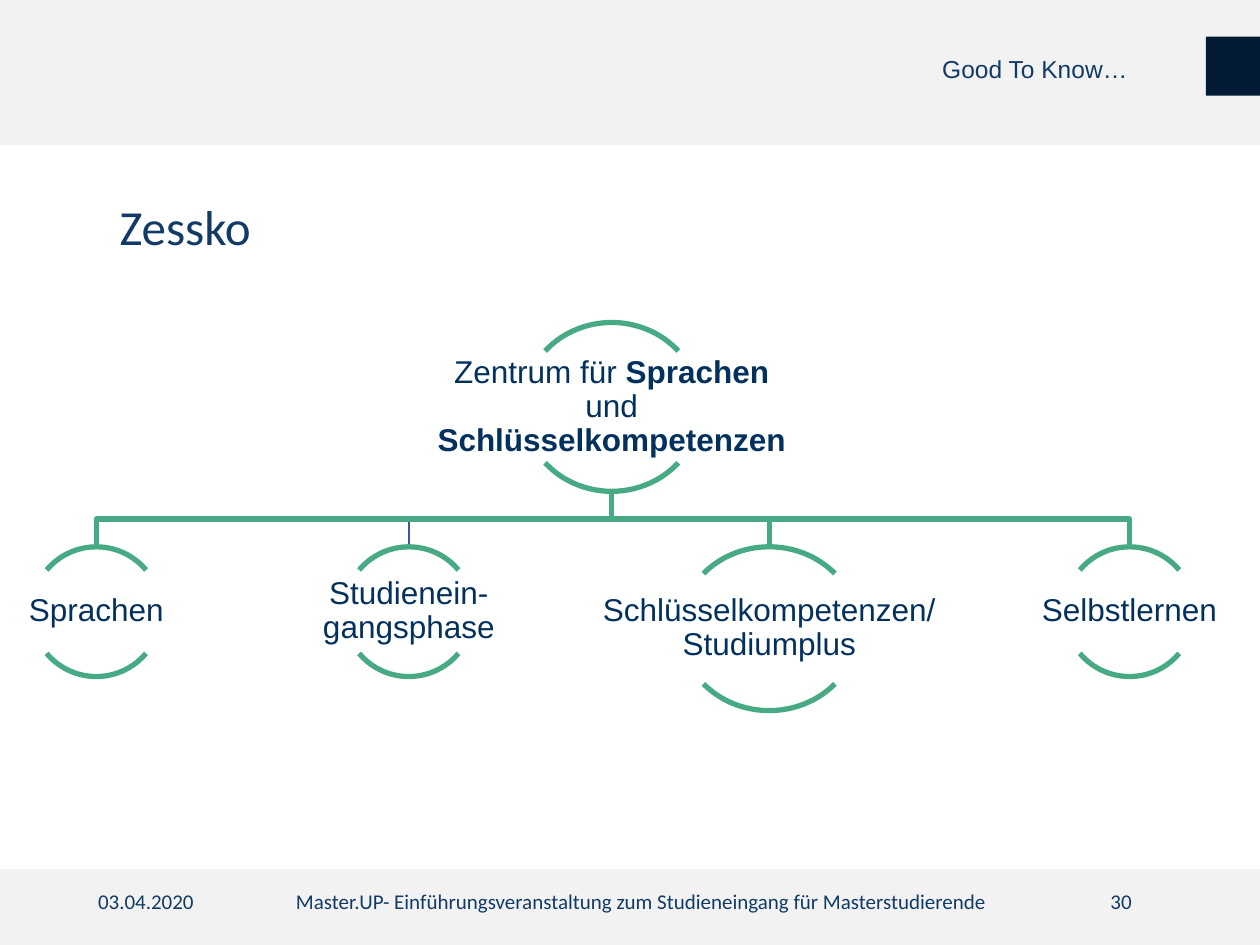
from dataclasses import dataclass

from pptx import Presentation
from pptx.dml.color import RGBColor
from pptx.enum.shapes import MSO_SHAPE
from pptx.enum.text import MSO_ANCHOR, PP_ALIGN
from pptx.util import Inches, Pt

RECT, ARC = MSO_SHAPE.RECTANGLE, MSO_SHAPE.ARC
TOP, MIDDLE = MSO_ANCHOR.TOP, MSO_ANCHOR.MIDDLE
LEFT, CENTER, RIGHT = PP_ALIGN.LEFT, PP_ALIGN.CENTER, PP_ALIGN.RIGHT


@dataclass(frozen=True)
class Theme:
    band: str = "F2F2F2"
    navy: str = "021A33"
    text: str = "113B66"
    node_text: str = "03315E"
    green: str = "47AA84"
    blue: str = "365B9D"
    heading_font: str = "Calibri"
    body_font: str = "Arial"
    title_size: float = 28
    node_size: float = 18
    header_size: float = 14
    footer_size: float = 12
    line: float = 3
    thin_line: float = 1


@dataclass(frozen=True)
class Run:
    text: str
    bold: bool = False


@dataclass(frozen=True)
class Box:
    x: float
    y: float
    w: float
    h: float

    def lengths(self) -> tuple:
        return Inches(self.x), Inches(self.y), Inches(self.w), Inches(self.h)


@dataclass(frozen=True)
class Node:
    oval: Box
    runs: tuple[Run, ...]
    branch_color: str = Theme.green
    branch_width: float = Theme.line

    @property
    def center(self) -> float:
        return self.oval.x + self.oval.w / 2

    @property
    def label(self) -> Box:
        """Twice as wide as the oval, 64 % of its height, same centre."""
        o = self.oval
        return Box(o.x - o.w / 2, o.y + 0.18 * o.h, 2 * o.w, 0.64 * o.h)


THEME = Theme()
ARC_ANGLES = ((132, 192), (24, 84))  # upper and lower arc
CHILD_TOP, BAR_Y = 4.34, 4.12

ROOT = Node(Box(4.15, 2.56, 1.41, 1.34), (
    Run("Zentrum für "), Run("Sprachen", True),
    Run(" und "), Run("Schlüsselkompetenzen", True)))
CHILDREN = (
    Node(Box(0.25, CHILD_TOP, 1.03, 1.03), (Run("Sprachen"),)),
    Node(Box(2.73, CHILD_TOP, 1.03, 1.03), (Run("Studienein-gangsphase"),),
         THEME.blue, THEME.thin_line),
    Node(Box(5.4, CHILD_TOP, 1.41, 1.3),
         (Run("Schlüsselkompetenzen/ Studiumplus"),)),
    Node(Box(8.45, CHILD_TOP, 1.03, 1.03), (Run("Selbstlernen"),)),
)


def rgb(color: str) -> RGBColor:
    return RGBColor.from_string(color)


def add_rect(s, box: Box, color: str) -> None:
    sp = s.shapes.add_shape(RECT, *box.lengths())
    sp.shadow.inherit = False
    sp.fill.solid()
    sp.fill.fore_color.rgb = rgb(color)
    sp.line.fill.background()


def add_text(s, box: Box, runs: tuple[Run, ...], font: str, size: float,
             color: str, align=LEFT, anchor=TOP, spacing: float = 1,
             inset: float | None = None) -> None:
    tf = s.shapes.add_textbox(*box.lengths()).text_frame
    tf.word_wrap = True
    tf.vertical_anchor = anchor
    if inset is not None:
        tf.margin_left = tf.margin_right = Inches(inset)
        tf.margin_top = tf.margin_bottom = Inches(inset)
    p = tf.paragraphs[0]
    p.alignment = align
    p.line_spacing = spacing
    for run in runs:
        r = p.add_run()
        r.text = run.text
        r.font.name = font
        r.font.size = Pt(size)
        r.font.bold = run.bold
        r.font.color.rgb = rgb(color)


def style_outline(sp, color: str, width: float) -> None:
    sp.shadow.inherit = False
    sp.fill.background()
    sp.line.color.rgb = rgb(color)
    sp.line.width = Pt(width)


def add_branch(s, parent: Node, child: Node) -> None:
    x0, y0 = parent.center, parent.oval.y + parent.oval.h
    x1, y1 = child.center, child.oval.y
    points = [(x0, BAR_Y), (x1, BAR_Y), (x1, y1)]
    fb = s.shapes.build_freeform(Inches(x0), Inches(y0))
    fb.add_line_segments([(Inches(x), Inches(y)) for x, y in points], close=False)
    style_outline(fb.convert_to_shape(), child.branch_color, child.branch_width)


def add_node(s, node: Node) -> None:
    for start, end in ARC_ANGLES:
        sp = s.shapes.add_shape(ARC, *node.oval.lengths())
        sp.adjustments[0] = start
        sp.adjustments[1] = end
        style_outline(sp, THEME.green, THEME.line)
    add_text(s, node.label, node.runs, THEME.body_font, THEME.node_size,
             THEME.node_text, CENTER, MIDDLE, spacing=0.9, inset=0.01)


def main() -> None:
    prs = Presentation()
    prs.slide_width, prs.slide_height = Inches(10), Inches(7.5)
    s = prs.slides.add_slide(prs.slide_layouts[6])

    # Header and footer bands
    add_rect(s, Box(0, 6.9, 10, 0.6), THEME.band)
    add_rect(s, Box(0, 0, 10, 1.15), THEME.band)

    # Footer texts
    footer = (
        (0.68, 2.25, "03.04.2020", LEFT),
        (2.25, 6.05, "Master.UP- Einführungsveranstaltung zum Studieneingang "
                     "für Masterstudierende", LEFT),
        (6.83, 2.25, "30", RIGHT),
    )
    for x, w, text, align in footer:
        add_text(s, Box(x, 7, w, 0.4), (Run(text),), THEME.heading_font,
                 THEME.footer_size, THEME.text, align)

    # Organisation chart
    for child in reversed(CHILDREN):
        add_branch(s, ROOT, child)
    for node in (ROOT, *CHILDREN):
        add_node(s, node)

    # Title and section header
    add_rect(s, Box(9.57, 0.29, 0.43, 0.47), THEME.navy)
    add_text(s, Box(0.85, 1.42, 8.62, 0.81), (Run("Zessko"),),
             THEME.heading_font, THEME.title_size, THEME.text,
             anchor=MIDDLE, spacing=0.9)
    add_text(s, Box(7.38, 0.19, 2.4, 0.74), (Run("Good To Know…"),),
             THEME.body_font, THEME.header_size, THEME.text,
             anchor=MIDDLE, spacing=0.9)

    prs.save("out.pptx")


if __name__ == "__main__":
    main()
